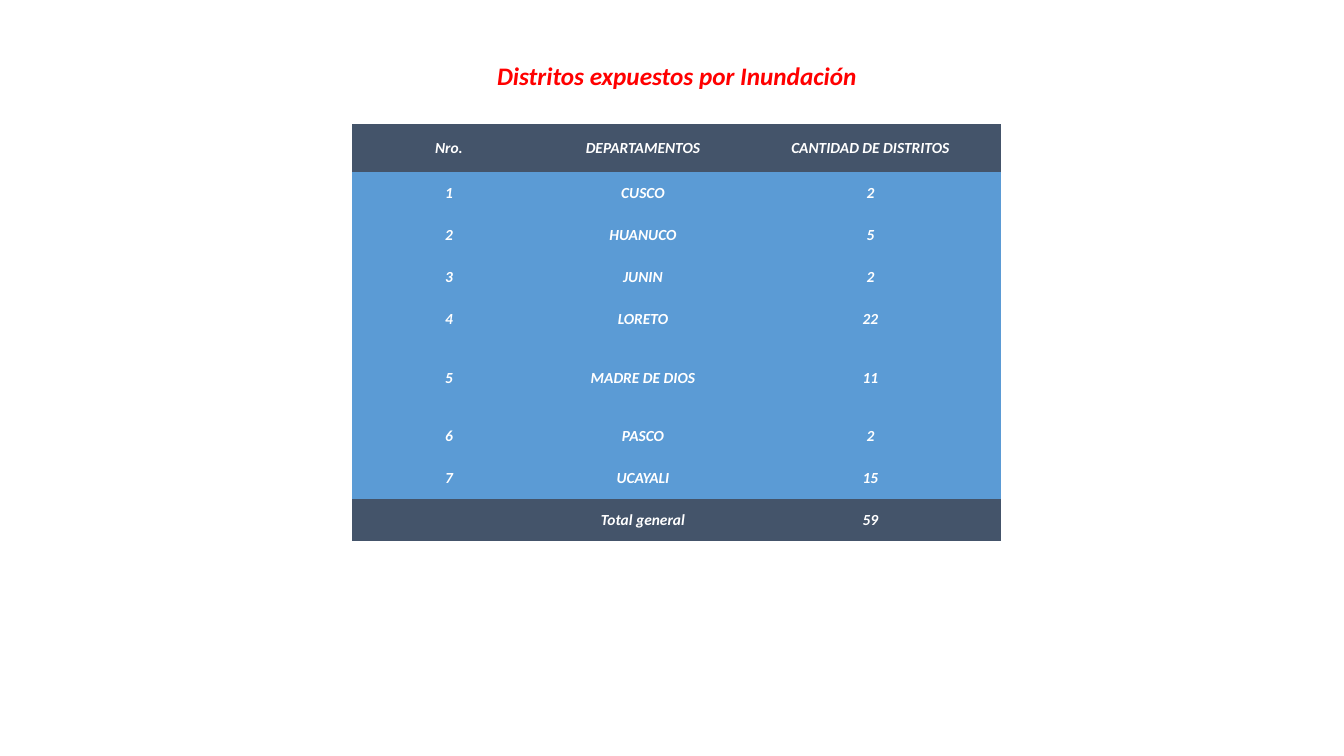
from dataclasses import dataclass

from pptx import Presentation
from pptx.dml.color import RGBColor
from pptx.enum.text import MSO_ANCHOR, MSO_AUTO_SIZE, PP_ALIGN
from pptx.oxml.ns import qn
from pptx.slide import Slide
from pptx.util import Emu, Pt

EMU_PER_PX = 914400 / 100.8


@dataclass(frozen=True)
class Theme:
    font: str = "Calibri"
    title_color: str = "FF0000"
    cell_text: str = "FFFFFF"
    band: str = "44546A"
    body: str = "5B9BD5"
    title_size: int = 18
    cell_size: int = 11
    plain_table: str = "{2D5ABB26-0587-4C30-8999-92F81FD0307C}"


@dataclass(frozen=True)
class Row:
    cells: tuple[str, str, str]
    fill: str
    height: int = 42


THEME = Theme()
COLUMN_WIDTHS = (194, 194, 261)
DEPARTMENTS = (
    ("CUSCO", 2, 42),
    ("HUANUCO", 5, 42),
    ("JUNIN", 2, 42),
    ("LORETO", 22, 42),
    ("MADRE DE DIOS", 11, 75),
    ("PASCO", 2, 42),
    ("UCAYALI", 15, 42),
)
ROWS = (
    Row(("Nro.", "DEPARTAMENTOS", "CANTIDAD DE DISTRITOS"), THEME.band, 48),
    *(
        Row((str(number), name, str(districts)), THEME.body, height)
        for number, (name, districts, height) in enumerate(DEPARTMENTS, 1)
    ),
    Row(("", "Total general", str(sum(d[1] for d in DEPARTMENTS))), THEME.band),
)


def px(n: int) -> Emu:
    return Emu(round(n * EMU_PER_PX))


def write(tf, text: str, size: int, color: str) -> None:
    tf.text = text
    p = tf.paragraphs[0]
    p.alignment = PP_ALIGN.CENTER
    for r in p.runs:
        r.font.name = THEME.font
        r.font.size = Pt(size)
        r.font.bold = r.font.italic = True
        r.font.color.rgb = RGBColor.from_string(color)


def add_title(s: Slide, text: str) -> None:
    tf = s.shapes.add_textbox(px(485), px(55), px(384), px(40)).text_frame
    tf.word_wrap = False
    tf.auto_size = MSO_AUTO_SIZE.SHAPE_TO_FIT_TEXT
    write(tf, text, THEME.title_size, THEME.title_color)


def add_district_table(s: Slide) -> None:
    width, height = sum(COLUMN_WIDTHS), sum(row.height for row in ROWS)
    sp = s.shapes.add_table(
        len(ROWS), len(COLUMN_WIDTHS), px(352), px(124), px(width), px(height)
    )
    table = sp.table
    table.first_row = table.horz_banding = False
    next(sp.element.iter(qn("a:tableStyleId"))).text = THEME.plain_table
    for column, column_width in zip(table.columns, COLUMN_WIDTHS):
        column.width = px(column_width)
    for table_row, row in zip(table.rows, ROWS):
        table_row.height = px(row.height)
        for cell, text in zip(table_row.cells, row.cells):
            cell.fill.solid()
            cell.fill.fore_color.rgb = RGBColor.from_string(row.fill)
            cell.vertical_anchor = MSO_ANCHOR.MIDDLE
            cell.margin_left = cell.margin_top = cell.margin_right = px(1)
            cell.margin_bottom = px(0)
            write(cell.text_frame, text, THEME.cell_size, THEME.cell_text)


def main() -> None:
    prs = Presentation()
    prs.slide_width, prs.slide_height = px(1344), px(756)
    s = prs.slides.add_slide(prs.slide_layouts[6])
    add_title(s, "Distritos expuestos por Inundación")
    add_district_table(s)
    prs.save("out.pptx")


if __name__ == "__main__":
    main()
